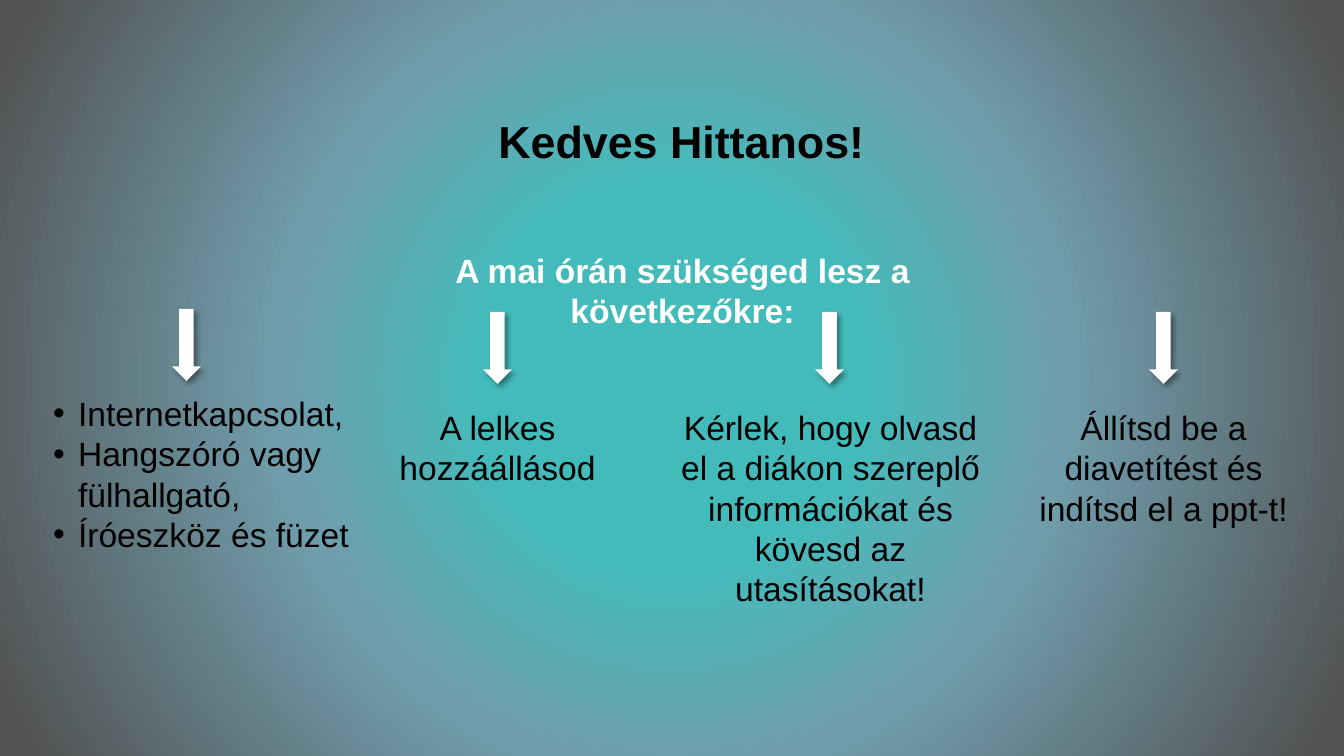
"""Builds the welcome slide listing what pupils need for the lesson."""
from lxml import etree
from pptx import Presentation
from pptx import util as u
from pptx.dml.color import RGBColor
from pptx.enum import shapes, text
from pptx.oxml import parse_xml
from pptx.oxml.ns import nsdecls, qn

PX = 12192000 / 1344
THEME = {
    "font": "Arial",
    "title": 32,
    "body": 24,
    "dark": "000000",
    "light": "FFFFFF",
    "glow": [(25, "44BBBB"), (51, "709DAC"), (97, "525252")],
}


def px(n):
    return u.Emu(round(n * PX))


def add_text(s, box, lines, size="body", color="dark", bold=False, bullets=False, inset=(0, 0)):
    tf = s.shapes.add_textbox(*map(px, box)).text_frame
    tf.word_wrap = True
    tf.margin_left = tf.margin_right = px(inset[0])
    tf.margin_top = tf.margin_bottom = px(inset[1])
    tf.text = "\n".join(lines)
    for p in tf.paragraphs:
        p.alignment = text.PP_ALIGN.LEFT if bullets else text.PP_ALIGN.CENTER
        if bullets:
            pPr = p._p.get_or_add_pPr()
            pPr.set("marL", str(px(25)))
            pPr.set("indent", str(px(-25)))
            bullet_color = etree.SubElement(pPr, qn("a:buClr"))
            etree.SubElement(bullet_color, qn("a:srgbClr"), val=THEME[color])
            etree.SubElement(pPr, qn("a:buFont"), typeface=THEME["font"])
            etree.SubElement(pPr, qn("a:buChar"), char="•")
        for r in p.runs:
            r.font.name = THEME["font"]
            r.font.size = u.Pt(THEME[size])
            r.font.bold = bold
            r.font.color.rgb = RGBColor.from_string(THEME[color])


prs = Presentation()
prs.slide_width, prs.slide_height = px(1344), px(756)
s = prs.slides.add_slide(prs.slide_layouts[6])

stops = "".join(
    f'<a:gs pos="{pos * 1000}"><a:srgbClr val="{color}"/></a:gs>' for pos, color in THEME["glow"]
)
s.element.cSld.insert(0, parse_xml(
    f'<p:bg {nsdecls("p", "a")}><p:bgPr><a:gradFill rotWithShape="1"><a:gsLst>{stops}</a:gsLst>'
    '<a:path path="circle"><a:fillToRect l="50000" t="50000" r="50000" b="50000"/></a:path>'
    '</a:gradFill><a:effectLst/></p:bgPr></p:bg>'
))

add_text(s, (172, 114, 1019, 72), ["Kedves Hittanos!"], size="title", bold=True)
add_text(s, (374, 245, 617, 50), ["A mai órán szükséged lesz a következőkre:"],
         color="light", bold=True, inset=(10, 5))
add_text(s, (53, 393, 321, 172),
         ["Internetkapcsolat,", "Hangszóró vagy fülhallgató,", "Íróeszköz és füzet"], bullets=True)

needs = [
    (361, 273, 126, "A lelkes hozzáállásod"),
    (670, 321, 330, "Kérlek, hogy olvasd el a diákon szereplő információkat és kövesd az utasításokat!"),
    (1027, 273, 126, "Állítsd be a diavetítést és indítsd el a ppt-t!"),
]
for left, width, height, need in needs:
    add_text(s, (left, 407, width, height), [need])

for left, top in [(172, 309), (483, 312), (815, 312), (1149, 312)]:
    sp = s.shapes.add_shape(shapes.MSO_SHAPE.DOWN_ARROW, px(left), px(top), px(29), px(72))
    sp.fill.solid()
    sp.fill.fore_color.rgb = RGBColor.from_string(THEME["light"])
    sp.line.fill.background()
    sp.shadow.inherit = False
    effects = sp._element.spPr.find(qn("a:effectLst"))
    shadow = etree.SubElement(effects, qn("a:outerShdw"), blurRad=str(u.Pt(4)),
                              dist=str(u.Pt(3)), dir="2700000", algn="tl", rotWithShape="0")
    tint = etree.SubElement(shadow, qn("a:srgbClr"), val=THEME["dark"])
    etree.SubElement(tint, qn("a:alpha"), val="40000")

prs.save("out.pptx")
